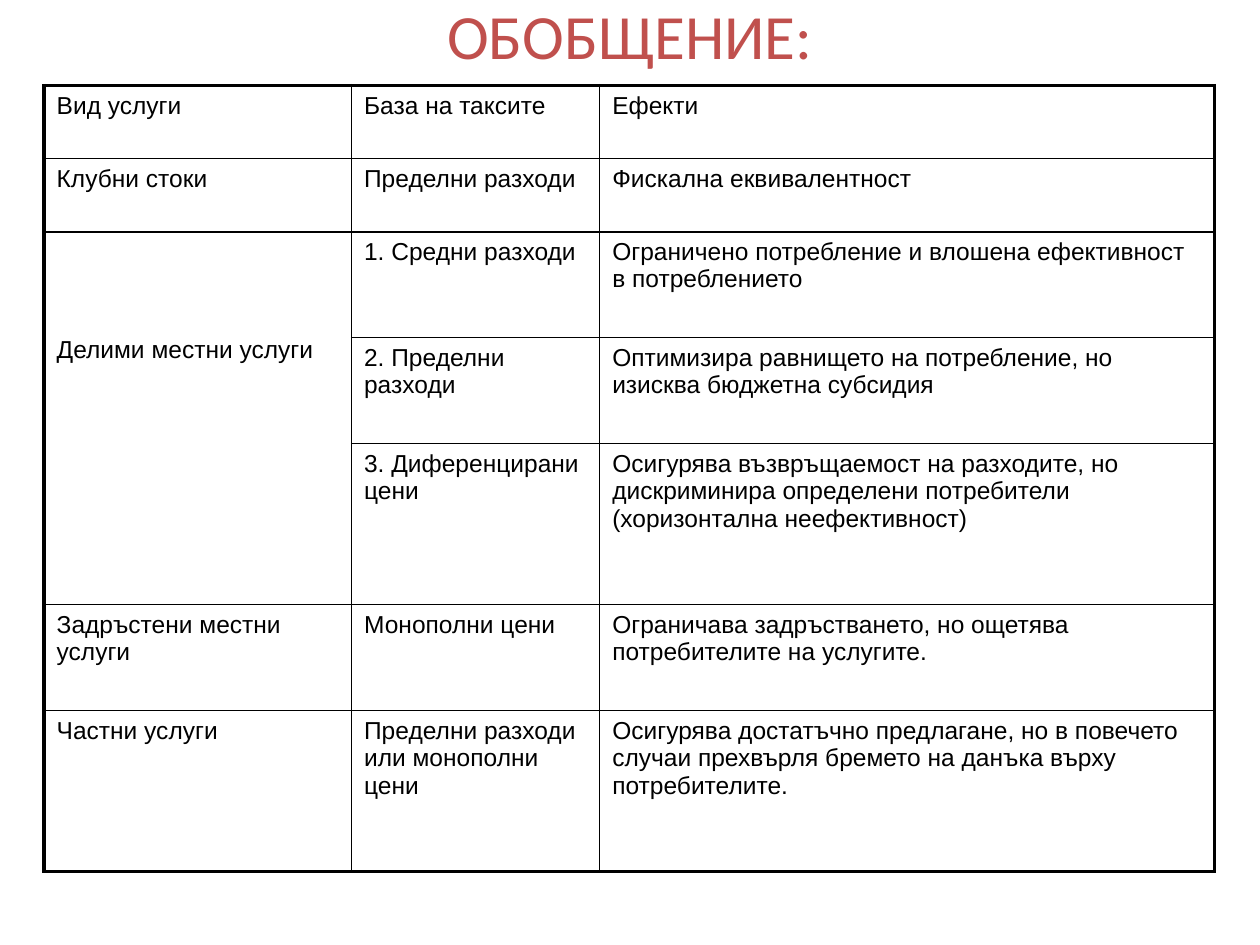
from dataclasses import dataclass

from lxml import etree
from pptx import Presentation
from pptx.dml.color import RGBColor
from pptx.enum.text import MSO_ANCHOR, PP_ALIGN
from pptx.oxml.ns import qn
from pptx.util import Inches, Pt

CENTER, LEFT = PP_ALIGN.CENTER, PP_ALIGN.LEFT
TOP, BOTTOM = MSO_ANCHOR.TOP, MSO_ANCHOR.BOTTOM


@dataclass(frozen=True)
class Theme:
    ink: str = "000000"
    accent: str = "C0504D"
    title_font: str = "Calibri"
    body_font: str = "Arial"
    title_size: float = 36
    body_size: float = 14
    outer_line: float = 2.25
    inner_line: float = 1


THEME = Theme()

COLUMN_WIDTHS = [2.44, 1.97, 4.88]
ROW_HEIGHTS = [0.58, 0.58, 0.84, 0.84, 1.28, 0.84, 1.28]
DIVISIBLE_FIRST, DIVISIBLE_LAST = 2, 4  # rows shared by the divisible services

ROWS = [
    ("Вид услуги", "База на таксите", "Ефекти"),
    ("Клубни стоки", "Пределни разходи", "Фискална еквивалентност"),
    ("Делими местни услуги", "1. Средни разходи",
     "Ограничено потребление и влошена ефективност в потреблението"),
    ("", "2. Пределни разходи",
     "Оптимизира равнището на потребление, но изисква бюджетна субсидия"),
    ("", "3. Диференцирани цени",
     "Осигурява възвръщаемост на разходите, но дискриминира определени "
     "потребители (хоризонтална неефективност)"),
    ("Задръстени местни услуги", "Монополни цени",
     "Ограничава задръстването, но ощетява потребителите на услугите."),
    ("Частни услуги", "Пределни разходи или монополни цени",
     "Осигурява достатъчно предлагане, но в повечето случаи прехвърля "
     "бремето на данъка върху потребителите."),
]


def write_text(frame, text, *, font=THEME.body_font, size=THEME.body_size,
               color=THEME.ink, align=LEFT):
    frame.word_wrap = True
    para = frame.paragraphs[0]
    para.alignment = align
    span = para.add_run()
    span.text = text
    span.font.name = font
    span.font.size = Pt(size)
    span.font.color.rgb = RGBColor.from_string(color)


def add_title(page, text):
    box = page.shapes.add_textbox(Inches(0.5), Inches(0.3), Inches(9), Inches(0.46))
    frame = box.text_frame
    frame.vertical_anchor = BOTTOM
    frame.margin_top = 0
    frame.margin_bottom = Inches(0.19)
    write_text(frame, text, font=THEME.title_font, size=THEME.title_size,
               color=THEME.accent, align=CENTER)


def set_borders(cell, row, column):
    """Draw thick lines on the table's outer edge and thin lines inside."""
    on_edge = {
        "a:lnL": column == 0,
        "a:lnR": column == len(COLUMN_WIDTHS) - 1,
        "a:lnT": row == 0,
        "a:lnB": row == len(ROW_HEIGHTS) - 1,
    }
    properties = cell._tc.get_or_add_tcPr()
    for tag, outer in on_edge.items():
        width = Pt(THEME.outer_line if outer else THEME.inner_line)
        line = etree.SubElement(properties, qn(tag), w=str(int(width)))
        fill = etree.SubElement(line, qn("a:solidFill"))
        etree.SubElement(fill, qn("a:srgbClr"), val=THEME.ink)


def add_summary_table(page):
    frame = page.shapes.add_table(
        len(ROW_HEIGHTS), len(COLUMN_WIDTHS), Inches(0.35), Inches(0.68),
        Inches(sum(COLUMN_WIDTHS)), Inches(sum(ROW_HEIGHTS)))
    table = frame.table
    table.first_row = table.horz_banding = False
    for column, width in zip(table.columns, COLUMN_WIDTHS):
        column.width = Inches(width)
    for row, height in zip(table.rows, ROW_HEIGHTS):
        row.height = Inches(height)

    for r, texts in enumerate(ROWS):
        for c, text in enumerate(texts):
            cell = table.cell(r, c)
            cell.vertical_anchor = TOP
            cell.margin_left = cell.margin_right = Inches(0.1)
            cell.margin_top = cell.margin_bottom = Inches(0.05)
            set_borders(cell, r, c)
            cell.fill.background()
            if text:
                write_text(cell.text_frame, text)

    divisible = table.cell(DIVISIBLE_FIRST, 0)
    divisible.merge(table.cell(DIVISIBLE_LAST, 0))
    divisible.margin_top = Inches(0.83)


def main():
    deck = Presentation()
    deck.slide_width, deck.slide_height = Inches(10), Inches(7.5)
    page = deck.slides.add_slide(deck.slide_layouts[6])
    add_title(page, "ОБОБЩЕНИЕ:")
    add_summary_table(page)
    deck.save("out.pptx")


if __name__ == "__main__":
    main()
